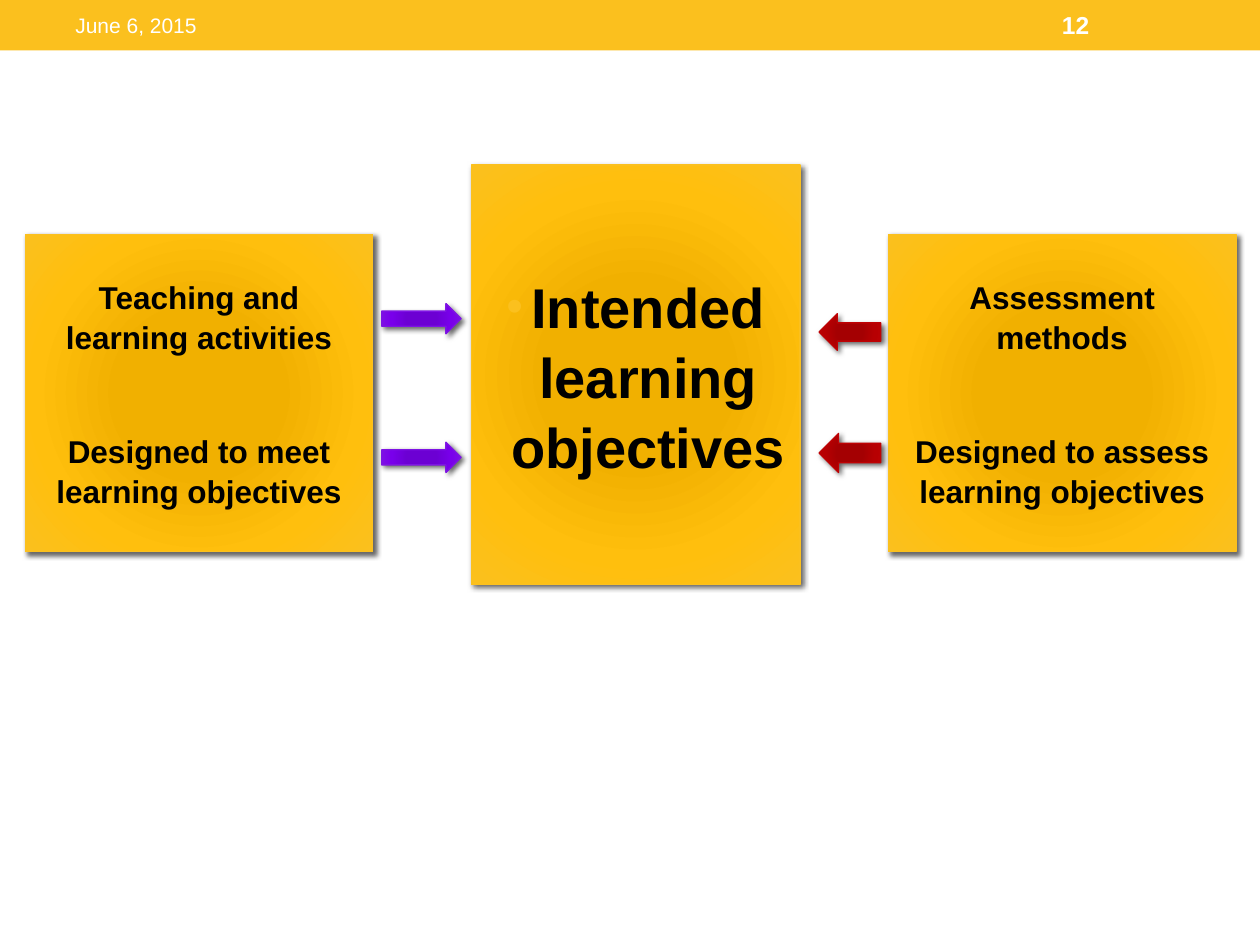
from pptx import Presentation
from pptx.dml.color import RGBColor
from pptx.enum.shapes import MSO_SHAPE
from pptx.enum.text import MSO_ANCHOR, PP_ALIGN
from pptx.oxml import parse_xml
from pptx.oxml.ns import nsdecls
from pptx.util import Inches, Pt

FONT = "Arial"
BLACK = RGBColor(0x00, 0x00, 0x00)
WHITE = RGBColor(0xFF, 0xFF, 0xFF)
GOLD = RGBColor(0xFB, 0xC0, 0x1E)
# Shades run from the centre to the edge
GOLD_SHADES = (RGBColor(0xF1, 0xB0, 0x00), RGBColor(0xFF, 0xBF, 0x0D), GOLD)
PURPLE_SHADES = (RGBColor(0x6C, 0x00, 0xD3), RGBColor(0x79, 0x00, 0xEB),
                 RGBColor(0x7E, 0x13, 0xE3))
RED_SHADES = (RGBColor(0xA4, 0x00, 0x02), RGBColor(0xB7, 0x00, 0x02),
              RGBColor(0xBE, 0x02, 0x04))
LINE_SPACING = 1.04


def radial_fill(shades):
    centre, middle, edge = shades
    stops = "".join(
        f'<a:gs pos="{percent * 1000}"><a:srgbClr val="{shade}"/></a:gs>'
        for percent, shade in ((0, centre), (34, centre), (70, middle), (100, edge)))
    return parse_xml(
        f'<a:gradFill {nsdecls("a")} rotWithShape="1"><a:gsLst>{stops}</a:gsLst>'
        '<a:path path="circle"><a:fillToRect l="100000" t="100000" r="100000" '
        'b="100000"/></a:path></a:gradFill>')


def soft_shadow():
    return parse_xml(
        f'<a:effectLst {nsdecls("a")}><a:outerShdw blurRad="{Pt(3)}" dist="{Pt(2)}" '
        'dir="2700000" algn="tl" rotWithShape="0"><a:srgbClr val="000000">'
        '<a:alpha val="60000"/></a:srgbClr></a:outerShdw></a:effectLst>')


def add_raised_shape(slide, preset, left, top, width, height, shades):
    """Add a shape with a radial gradient, a thin outline and a soft shadow."""
    raised = slide.shapes.add_shape(
        preset, Inches(left), Inches(top), Inches(width), Inches(height))
    raised.line.color.rgb = shades[-1]
    raised.line.width = Pt(0.75)
    properties = raised._element.spPr
    properties.insert(2, radial_fill(shades))  # after position and geometry
    properties.append(soft_shadow())
    return raised


def style(paragraph, size, color, bold=True):
    paragraph.font.name = FONT
    paragraph.font.size = Pt(size)
    paragraph.font.bold = bold
    paragraph.font.color.rgb = color


def add_box(slide, left, top, width, height, statements, size):
    box = add_raised_shape(
        slide, MSO_SHAPE.RECTANGLE, left, top, width, height, GOLD_SHADES)
    frame = box.text_frame
    frame.word_wrap = True
    frame.vertical_anchor = MSO_ANCHOR.MIDDLE
    for index, statement in enumerate(statements):
        paragraph = frame.add_paragraph() if index else frame.paragraphs[0]
        paragraph.text = statement
        paragraph.alignment = PP_ALIGN.CENTER
        paragraph.line_spacing = LINE_SPACING
        paragraph.space_before = Pt(43 if index else 0)
        style(paragraph, size, BLACK)
    return box


def add_bullet(paragraph):
    properties = paragraph._p.get_or_add_pPr()
    properties.set("marL", str(Inches(0.2)))
    properties.set("indent", str(-Inches(0.2)))
    for markup in (f'<a:buClr {nsdecls("a")}><a:srgbClr val="{GOLD}"/></a:buClr>',
                   f'<a:buSzPct {nsdecls("a")} val="85000"/>',
                   f'<a:buFont {nsdecls("a")} typeface="{FONT}"/>',
                   f'<a:buChar {nsdecls("a")} char="•"/>'):
        properties.insert_element_before(parse_xml(markup), "a:tabLst", "a:defRPr")


def add_arrow(slide, left, top, width, height, shades, rotation=0):
    arrow = add_raised_shape(
        slide, MSO_SHAPE.RIGHT_ARROW, left, top, width, height, shades)
    arrow.rotation = rotation


def add_header_text(slide, left, width, text, size, bold):
    header = slide.shapes.add_textbox(
        Inches(left), Inches(0.02), Inches(width), Inches(0.36))
    frame = header.text_frame
    frame.word_wrap = True
    frame.vertical_anchor = MSO_ANCHOR.MIDDLE
    frame.text = text
    style(frame.paragraphs[0], size, WHITE, bold)


def add_header(slide, width):
    band = slide.shapes.add_shape(MSO_SHAPE.RECTANGLE, 0, 0, width, Inches(0.4))
    band.shadow.inherit = False
    band.fill.solid()
    band.fill.fore_color.rgb = GOLD
    band.line.fill.background()
    add_header_text(slide, 0.5, 3.17, "June 6, 2015", 12, False)
    add_header_text(slide, 8.33, 1.17, "12", 14, True)


def main():
    presentation = Presentation()
    presentation.slide_width = Inches(10)
    presentation.slide_height = Inches(7.5)
    slide = presentation.slides.add_slide(presentation.slide_layouts[6])

    add_header(slide, presentation.slide_width)
    add_box(slide, 0.2, 1.86, 2.76, 2.52,
            ("Teaching and learning activities",
             "Designed to meet learning objectives"), 18)
    objectives = add_box(slide, 3.74, 1.31, 2.61, 3.33,
                         ("Intended learning objectives",), 32)
    goal = objectives.text_frame.paragraphs[0]
    goal.space_before = Pt(6)
    add_bullet(goal)
    add_box(slide, 7.05, 1.86, 2.76, 2.52,
            ("Assessment methods", "Designed to assess learning objectives"), 18)

    for top in (2.41, 3.51):
        add_arrow(slide, 3.03, top, 0.63, 0.24, PURPLE_SHADES)
    for top, height in ((2.49, 0.29), (3.44, 0.31)):
        add_arrow(slide, 6.5, top, 0.49, height, RED_SHADES, rotation=180)

    presentation.save("out.pptx")


if __name__ == "__main__":
    main()
